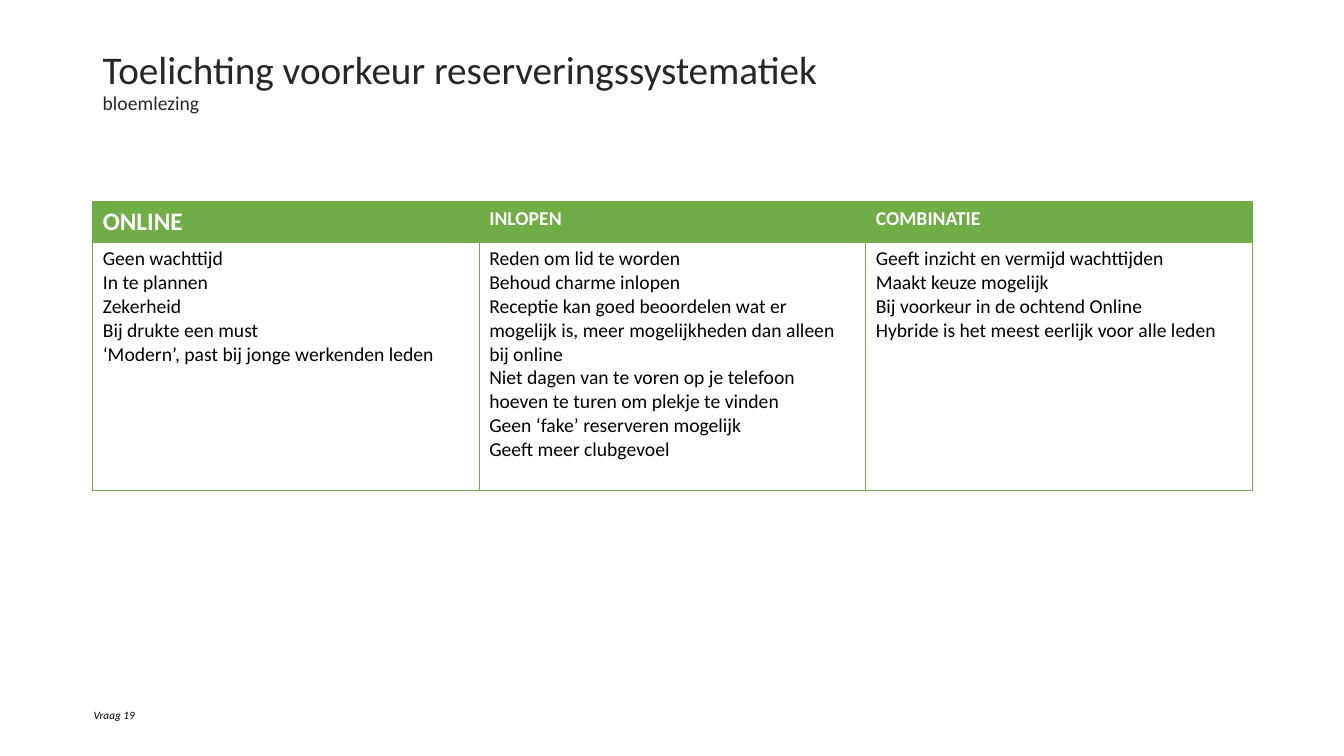
"""Build the slide on reservation preferences."""
from dataclasses import dataclass

from lxml.etree import SubElement
from pptx import Presentation
from pptx.dml.color import RGBColor as Rgb
from pptx.enum.text import MSO_ANCHOR as Anchor, MSO_AUTO_SIZE as Fit
from pptx.oxml.ns import qn
from pptx.slide import Slide
from pptx.table import Table, _Cell as Cell
from pptx.util import Inches, Pt

GREEN = Rgb(0x70, 0xAD, 0x47)
WHITE = Rgb(0xFF, 0xFF, 0xFF)
BLACK = Rgb(0, 0, 0)
DARK = Rgb(0x26, 0x26, 0x26)
FACE = "Calibri"


@dataclass
class Column:
    """One way of booking, with the reasons given for it."""
    head: str
    size: int
    lines: list[str]


COLUMNS = [
    Column("ONLINE", 18, [
        "Geen wachttijd",
        "In te plannen",
        "Zekerheid",
        "Bij drukte een must",
        "‘Modern’, past bij jonge werkenden leden",
    ]),
    Column("INLOPEN", 14, [
        "Reden om lid te worden",
        "Behoud charme inlopen",
        "Receptie kan goed beoordelen wat er mogelijk is, "
        "meer mogelijkheden dan alleen bij online",
        "Niet dagen van te voren op je telefoon hoeven te turen "
        "om plekje te vinden",
        "Geen ‘fake’ reserveren mogelijk",
        "Geeft meer clubgevoel",
    ]),
    Column("COMBINATIE", 14, [
        "Geeft inzicht en vermijd wachttijden",
        "Maakt keuze mogelijk",
        "Bij voorkeur in de ochtend Online",
        "Hybride is het meest eerlijk voor alle leden",
    ]),
]


def style(font, size: float, color: Rgb, bold: bool = False) -> None:
    """Set face, size, colour and weight of a font."""
    font.name = FACE
    font.size = Pt(size)
    font.bold = bold
    font.color.rgb = color


def border(cell: Cell) -> None:
    """Draw a thin green line on each side of a cell."""
    props = cell._tc.get_or_add_tcPr()
    for side in ("lnL", "lnR", "lnT", "lnB"):
        line = SubElement(props, qn(f"a:{side}"), w=str(Pt(0.5)))
        fill = SubElement(line, qn("a:solidFill"))
        SubElement(fill, qn("a:srgbClr"), val=str(GREEN))


def write(cell: Cell, lines: list[str], size: int, color: Rgb, bold: bool) -> None:
    """Fill a cell with one paragraph per line."""
    border(cell)
    cell.text_frame.text = "\n".join(lines)
    for para in cell.text_frame.paragraphs:
        style(para.font, size, color, bold)


def add_title(slide: Slide) -> None:
    """Add the title and its small second line."""
    box = slide.shapes.add_textbox(Inches(0.92), Inches(0.4), Inches(11.5), Inches(0.84))
    frame = box.text_frame
    frame.word_wrap = True
    frame.vertical_anchor = Anchor.MIDDLE
    para = frame.paragraphs[0]
    para.line_spacing = 0.9
    run = para.add_run()
    run.text = "Toelichting voorkeur reserveringssystematiek"
    style(run.font, 28, DARK)
    para.add_line_break()
    run = para.add_run()
    run.text = "bloemlezing"
    style(run.font, 14, DARK)


def add_grid(slide: Slide) -> None:
    """Add the table of reasons."""
    grid: Table = slide.shapes.add_table(
        2, len(COLUMNS), Inches(0.92), Inches(2), Inches(11.5), Inches(2.86)).table
    grid.first_row = grid.horz_banding = False
    grid.rows[0].height = Inches(0.4)
    grid.rows[1].height = Inches(2.46)
    for num, col in enumerate(COLUMNS):
        head, body = grid.cell(0, num), grid.cell(1, num)
        write(head, [col.head], col.size, WHITE, True)
        head.fill.solid()
        head.fill.fore_color.rgb = GREEN
        write(body, col.lines, 14, BLACK, False)
        body.fill.background()


def add_note(slide: Slide) -> None:
    """Add the question number at the foot."""
    box = slide.shapes.add_textbox(Inches(0.83), Inches(6.98), Inches(0.61), Inches(0.24))
    frame = box.text_frame
    frame.word_wrap = False
    frame.auto_size = Fit.SHAPE_TO_FIT_TEXT
    para = frame.paragraphs[0]
    para.text = "Vraag 19"
    style(para.font, 8, BLACK)
    para.font.italic = True


def main() -> None:
    """Make the slide and save it."""
    deck = Presentation()
    deck.slide_width = Inches(13.33)
    deck.slide_height = Inches(7.5)
    slide = deck.slides.add_slide(deck.slide_layouts[6])
    add_title(slide)
    add_grid(slide)
    add_note(slide)
    deck.save("out.pptx")


if __name__ == "__main__":
    main()
